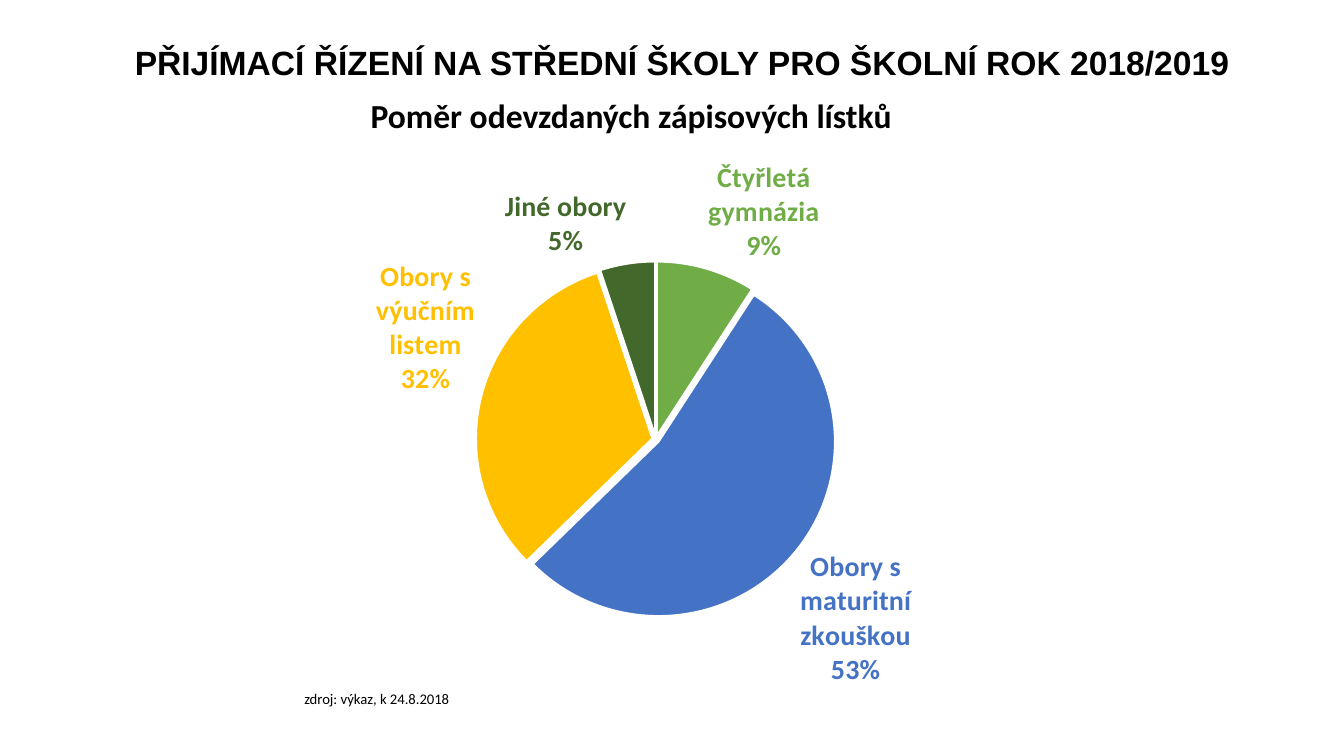
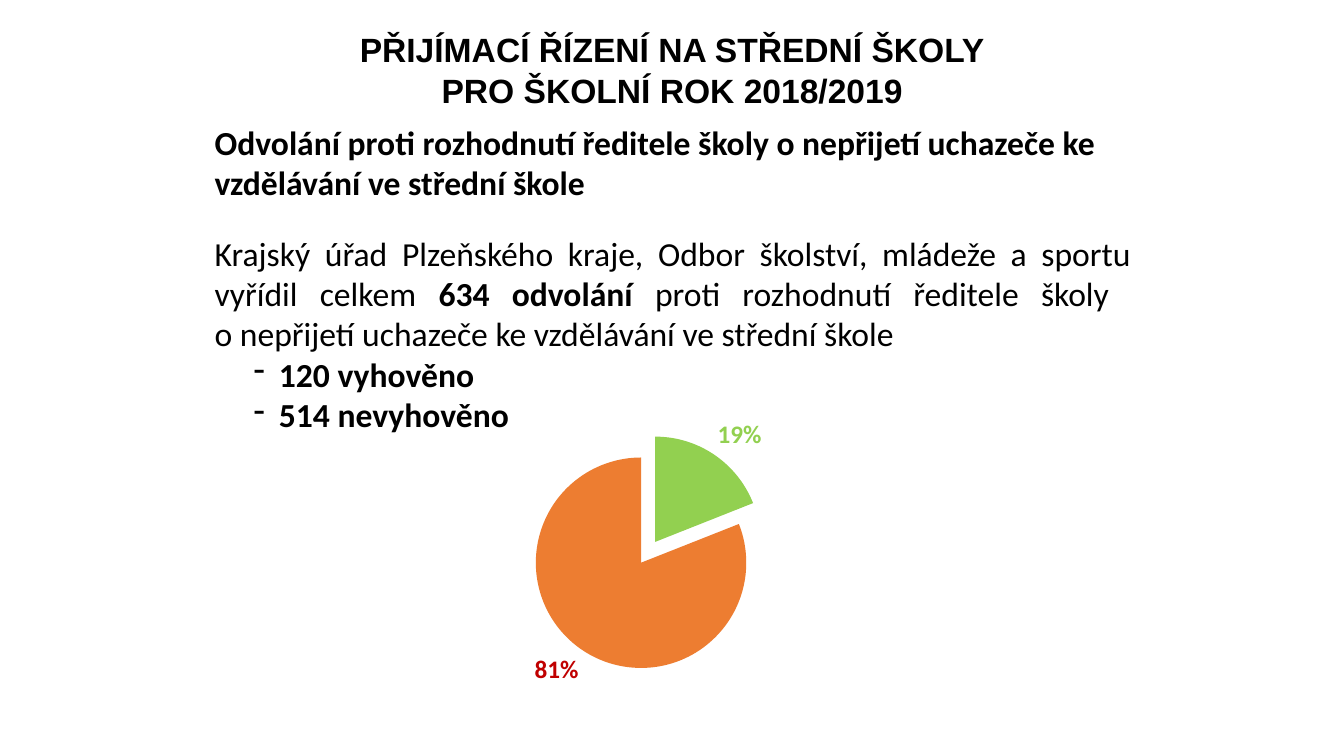
from lxml import etree
from pptx import Presentation
from pptx.chart.data import CategoryChartData
from pptx.dml.color import RGBColor
from pptx.enum.chart import XL_CHART_TYPE as ChartType, XL_LABEL_POSITION as LabelPos
from pptx.enum.text import MSO_ANCHOR as Anchor, PP_ALIGN as Align
from pptx.oxml.ns import qn
from pptx.util import Cm, Pt

BLACK = RGBColor(0x00, 0x00, 0x00)
WHITE = RGBColor(0xFF, 0xFF, 0xFF)
GREEN = RGBColor(0x70, 0xAD, 0x47)
BLUE = RGBColor(0x44, 0x72, 0xC4)
GOLD = RGBColor(0xFF, 0xC0, 0x00)
DARK_GREEN = RGBColor(0x43, 0x68, 0x2B)
LIME = RGBColor(0x92, 0xD0, 0x50)
ORANGE = RGBColor(0xED, 0x7D, 0x31)
RED = RGBColor(0xC0, 0x00, 0x00)

TITLE_FONT, BODY_FONT = "Arial", "Calibri"
PERCENT = '0"%"'

# Content: boxes are left, top, width, height in cm; a paragraph is a list of (text, bold)
SLIDES = [
    dict(
        title=["PŘIJÍMACÍ ŘÍZENÍ NA STŘEDNÍ ŠKOLY PRO ŠKOLNÍ ROK 2018/2019"],
        title_box=(1.8, 0.53, 30.78, 2.06),
        texts=[
            dict(box=(9.09, 2.26, 16.23, 1.27),
                 paragraphs=[[("Poměr odevzdaných zápisových lístků", True)]]),
            dict(box=(7.42, 17.25, 4.47, 0.71), size=10.5,
                 paragraphs=[[("zdroj: výkaz, k 24.8.2018", False)]]),
        ],
        chart=dict(
            box=(7.42, 3.91, 18.59, 13.54), plot=(0.14, 0.2, 0.7, 0.67),
            explosion=2, border=1.5, label_size=20, show_category=True,
            # category, value, slice colour, label colour
            slices=[("Čtyřletá gymnázia", 9, GREEN, GREEN),
                    ("Obory s maturitní zkouškou", 53, BLUE, BLUE),
                    ("Obory s výučním listem", 32, GOLD, GOLD),
                    ("Jiné obory", 5, DARK_GREEN, DARK_GREEN)]),
    ),
    dict(
        title=["PŘIJÍMACÍ ŘÍZENÍ NA STŘEDNÍ ŠKOLY", "PRO ŠKOLNÍ ROK 2018/2019"],
        title_box=(4.52, 0.76, 24.84, 1.98),
        texts=[
            dict(box=(5.16, 2.95, 23.04, 2.31),
                 paragraphs=[[("Odvolání proti rozhodnutí ředitele školy o nepřijetí "
                               "uchazeče ke vzdělávání ve střední škole", True)]]),
            dict(box=(5.16, 5.74, 23.6, 5.38), align=Align.JUSTIFY,
                 paragraphs=[[("Krajský úřad Plzeňského kraje, Odbor školství, mládeže "
                               "a sportu vyřídil celkem ", False),
                              ("634 odvolání ", True),
                              ("proti rozhodnutí ředitele školy \n"
                               "o nepřijetí uchazeče ke vzdělávání ve střední škole", False)]],
                 bullets=["120 vyhověno", "514 nevyhověno"]),
        ],
        chart=dict(
            box=(9.73, 10.01, 13.21, 7.82), plot=(0.25, 0.12, 0.5, 0.76),
            explosion=12, border=None, label_size=18, show_category=False,
            slices=[("1", 19, LIME, LIME), ("2", 81, ORANGE, RED)]),
    ),
]


def style_font(font, name, size, color, bold):
    font.name, font.size, font.bold = name, Pt(size), bold
    font.color.rgb = color


def add_box(slide, box):
    tf = slide.shapes.add_textbox(*map(Cm, box)).text_frame
    tf.word_wrap = True
    return tf


def add_title(slide, lines, box):
    tf = add_box(slide, box)
    tf.vertical_anchor = Anchor.MIDDLE
    tf.text = "\n".join(lines)
    for p in tf.paragraphs:
        p.alignment = Align.CENTER
        style_font(p.runs[0].font, TITLE_FONT, 24, BLACK, True)


def add_text(slide, box, paragraphs, size=24, align=Align.LEFT, bullets=()):
    tf = add_box(slide, box)
    items = paragraphs + [[(text, True)] for text in bullets]
    for i, parts in enumerate(items):
        p = tf.paragraphs[0] if i == 0 else tf.add_paragraph()
        p.alignment = align
        for text, bold in parts:
            for n, line in enumerate(text.split("\n")):
                if n:
                    p.add_line_break()
                r = p.add_run()
                r.text = line
                style_font(r.font, BODY_FONT, size, BLACK, bold)
        if i >= len(paragraphs):
            add_dash(p)


def add_dash(p):
    pPr = p._p.get_or_add_pPr()
    pPr.set("marL", str(Cm(1.62)))
    pPr.set("indent", str(-Cm(0.64)))
    etree.SubElement(pPr, qn("a:buChar"), char="-")


def set_plot_area(chart, plot):
    area = chart._chartSpace.chart.plotArea
    for old in area.findall(qn("c:layout")):
        area.remove(old)
    layout = etree.Element(qn("c:layout"))
    area.insert(0, layout)
    manual = etree.SubElement(layout, qn("c:manualLayout"))
    values = [("layoutTarget", "inner"), ("xMode", "edge"), ("yMode", "edge")]
    values += zip("xywh", map(str, plot))
    for tag, value in values:
        etree.SubElement(manual, qn("c:" + tag), val=value)


def set_explosion(ser, percent):
    # the element belongs right before the first data point
    explosion = etree.Element(qn("c:explosion"), val=str(percent))
    ser.find(qn("c:dPt")).addprevious(explosion)


def finish_label(dLbl, show_category):
    txPr = dLbl.find(qn("c:txPr"))
    txPr.find(qn("a:bodyPr")).set("wrap", "square")
    txPr.addprevious(etree.Element(qn("c:numFmt"), formatCode=PERCENT, sourceLinked="0"))
    dLbl.find(qn("c:showCatName")).set("val", str(int(show_category)))
    etree.SubElement(dLbl, qn("c:separator")).text = "\n"


def add_pie(slide, box, plot, explosion, border, label_size, show_category, slices):
    data = CategoryChartData(number_format=PERCENT)
    data.categories = [s[0] for s in slices]
    data.add_series("Podíl", [s[1] for s in slices])
    chart = slide.shapes.add_chart(ChartType.PIE, *map(Cm, box), data).chart
    chart.has_legend = chart.has_title = False
    chart.font.name, chart.font.size = BODY_FONT, Pt(label_size)
    chart.plots[0].vary_by_categories = True
    set_plot_area(chart, plot)

    series = chart.plots[0].series[0]
    for i, (_, _, fill, label_color) in enumerate(slices):
        point = series.points[i]
        point.format.fill.solid()
        point.format.fill.fore_color.rgb = fill
        line = point.format.line
        if border:
            line.color.rgb, line.width = WHITE, Pt(border)
        else:
            line.fill.background()
        label = point.data_label
        style_font(label.font, BODY_FONT, label_size, label_color, True)
        label.position = LabelPos.OUTSIDE_END
    set_explosion(series._element, explosion)
    for dLbl in series._element.iter(qn("c:dLbl")):
        finish_label(dLbl, show_category)


def main():
    prs = Presentation()
    prs.slide_width, prs.slide_height = Cm(33.87), Cm(19.05)
    for content in SLIDES:
        slide = prs.slides.add_slide(prs.slide_layouts[6])
        add_title(slide, content["title"], content["title_box"])
        add_pie(slide, **content["chart"])
        for text in content["texts"]:
            add_text(slide, **text)
    prs.save("out.pptx")


if __name__ == "__main__":
    main()
